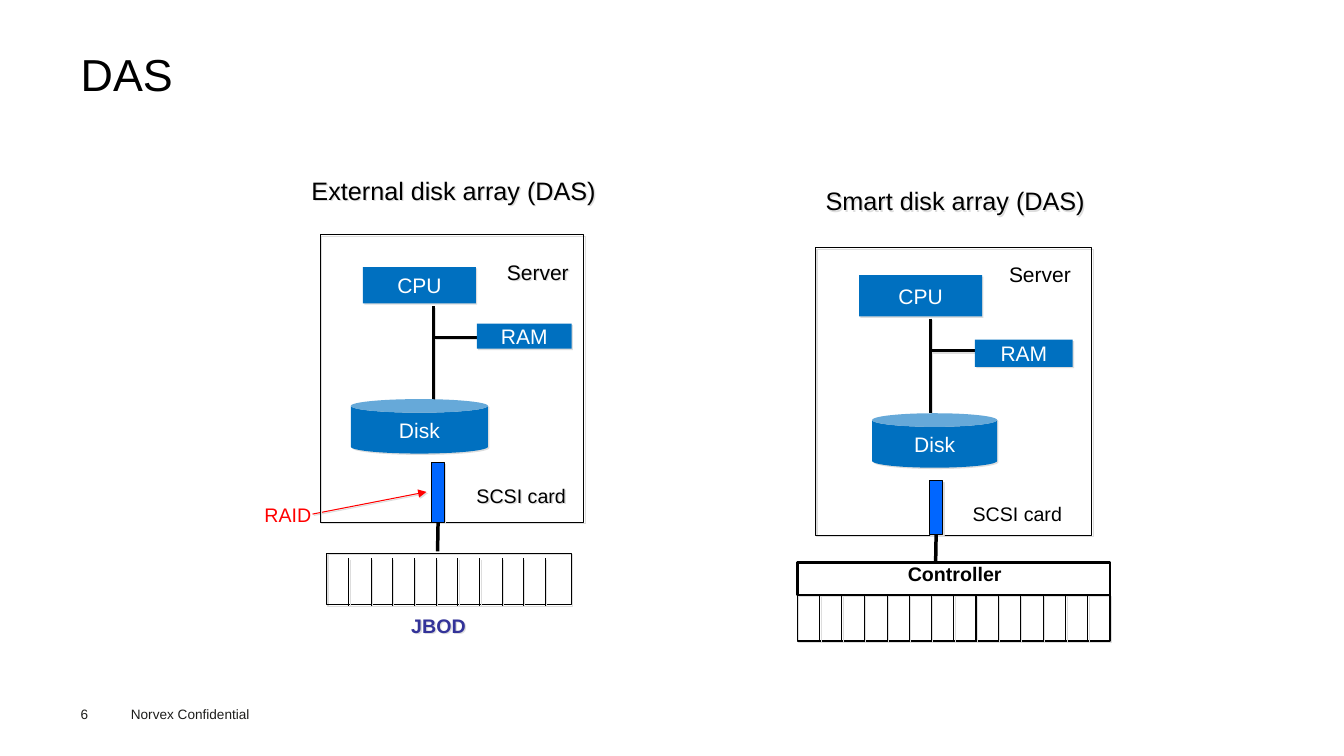
from dataclasses import dataclass

from lxml.etree import SubElement
from pptx import Presentation
from pptx.dml.color import RGBColor
from pptx.enum.shapes import MSO_CONNECTOR as Link, MSO_SHAPE as Preset
from pptx.enum.text import MSO_ANCHOR as Anchor, MSO_AUTO_SIZE as AutoSize, PP_ALIGN as Align
from pptx.oxml.ns import qn
from pptx.util import Emu, Pt

PX = 9144
FONT = "Arial"
COLORS = {
    "ink": "000000", "footer": "1D1D1B", "white": "FFFFFF", "part": "0070C0",
    "card": "0066FF", "raid": "FF0000", "jbod": "333399", "shadow": "DDDDDD",
}

Rect = tuple[int, int, int, int]
Point = tuple[int, int]


@dataclass(frozen=True)
class Block:
    box: Rect
    label: str = ""
    preset: Preset = Preset.RECTANGLE
    fill: str = ""
    line: float = 0
    shadow: bool = True


@dataclass(frozen=True)
class Caption:
    label: str
    box: Rect
    size: float
    color: str = "ink"
    bold: bool = False
    shadow: bool = False
    align: Align = Align.CENTER
    inset: Point = (9, 4)


@dataclass(frozen=True)
class Wire:
    start: Point
    end: Point
    width: float = 2
    color: str = "ink"
    arrow: bool = False
    shadow: bool = True


@dataclass(frozen=True)
class Dividers:
    first: int
    last: int
    count: int
    top: int
    bottom: int


@dataclass(frozen=True)
class DiskArray:
    wires: list[Wire]
    blocks: list[Block]
    card: Block
    cable_bottom: int
    dividers: Dividers
    captions: list[Caption]


EXTERNAL = DiskArray(
    wires=[
        Wire((430, 304), (430, 397)),
        Wire((430, 335), (506, 335)),
        Wire((310, 510), (423, 488), 0.75, "raid", arrow=True),
    ],
    blocks=[
        Block((360, 265, 112, 36), "CPU", fill="part"),
        Block((348, 396, 136, 54), "Disk", Preset.CAN, "part"),
        Block((473, 321, 94, 25), "RAM", fill="part"),
        Block((318, 233, 261, 285), line=0.75),
        Block((324, 549, 243, 51), line=0.75),
    ],
    card=Block((428, 459, 13, 59), fill="card", line=0.75),
    cable_bottom=547,
    dividers=Dividers(346, 541, 10, 554, 601),
    captions=[
        Caption("External disk array (DAS)", (327, 170, 246, 39), 18, shadow=True),
        Caption("Server", (495, 253, 77, 34), 15, shadow=True),
        Caption("SCSI card", (433, 476, 168, 32), 14, shadow=True),
        Caption("RAID", (235, 495, 101, 32), 14, "raid"),
        Caption("JBOD", (403, 605, 64, 32), 14, "jbod", bold=True, shadow=True),
    ],
)

SMART = DiskArray(
    wires=[
        Wire((923, 316), (923, 410)),
        Wire((923, 348), (1001, 348)),
    ],
    blocks=[
        Block((865, 410, 124, 54), "Disk", Preset.CAN, "part"),
        Block((852, 273, 122, 41), "CPU", fill="part"),
        Block((967, 337, 97, 27), "RAM", fill="part"),
        Block((809, 246, 274, 285), line=0.75),
        Block((791, 590, 310, 46), line=0.75),
        Block((791, 558, 310, 32), line=1.5, shadow=False),
    ],
    card=Block((922, 477, 13, 53), fill="card", line=0.75),
    cable_bottom=557,
    dividers=Dividers(813, 1079, 13, 590, 636),
    captions=[
        Caption("Smart disk array (DAS)", (826, 180, 243, 38), 18, shadow=True),
        Caption("Server", (993, 255, 77, 34), 15),
        Caption("SCSI card", (943, 494, 132, 32), 14),
        Caption("Controller", (909, 553, 76, 32), 14, bold=True),
    ],
)

FOOTER = [
    Caption("Norvex Confidential", (120, 695, 160, 27), 9.7, "footer",
            align=Align.LEFT, inset=(10, 5)),
    Caption("6", (80, 700, 55, 16), 9.7, "footer", align=Align.LEFT, inset=(0, 0)),
]


def px(*lengths: int) -> list[Emu]:
    return [Emu(length * PX) for length in lengths]


def rgb(name: str) -> RGBColor:
    return RGBColor.from_string(COLORS[name])


def set_effects(shape, shadow: bool) -> None:
    properties = shape._element.spPr
    effects = properties.find(qn("a:effectLst"))
    if effects is None:
        effects = SubElement(properties, qn("a:effectLst"))
    if shadow:
        outer = SubElement(effects, qn("a:outerShdw"), dist="17780", dir="2700000",
                           algn="ctr", rotWithShape="0")
        SubElement(outer, qn("a:srgbClr"), val=COLORS["shadow"])


def write(frame, label: str, size: float, color: str, bold: bool = False,
          align: Align = Align.CENTER, inset: Point = (9, 4),
          anchor: Anchor = Anchor.TOP) -> None:
    frame.auto_size = AutoSize.NONE
    frame.word_wrap = align == Align.LEFT
    frame.vertical_anchor = anchor
    frame.margin_left, frame.margin_top = px(*inset)
    frame.margin_right, frame.margin_bottom = px(*inset)
    paragraph = frame.paragraphs[0]
    paragraph.alignment = align
    run = paragraph.add_run()
    run.text = label
    run.font.name = FONT
    run.font.size = Pt(size)
    run.font.bold = bold
    run.font.color.rgb = rgb(color)


def draw_block(slide, block: Block):
    shape = slide.shapes.add_shape(block.preset, *px(*block.box))
    shape.shadow.inherit = False
    if block.fill:
        shape.fill.solid()
        shape.fill.fore_color.rgb = rgb(block.fill)
    else:
        shape.fill.background()
    if block.line:
        shape.line.color.rgb = rgb("ink")
        shape.line.width = Pt(block.line)
    else:
        shape.line.fill.background()
    set_effects(shape, block.shadow)
    if block.label:
        write(shape.text_frame, block.label, 15, "white", anchor=Anchor.MIDDLE)
    return shape


def draw_caption(slide, caption: Caption) -> None:
    box = slide.shapes.add_textbox(*px(*caption.box))
    set_effects(box, caption.shadow)
    write(box.text_frame, caption.label, caption.size, caption.color,
          caption.bold, caption.align, caption.inset)


def draw_wire(slide, wire: Wire):
    line = slide.shapes.add_connector(Link.STRAIGHT, *px(*wire.start, *wire.end))
    line.line.color.rgb = rgb(wire.color)
    line.line.width = Pt(wire.width)
    if wire.arrow:
        SubElement(line._element.spPr.find(qn("a:ln")), qn("a:tailEnd"), type="triangle")
    set_effects(line, wire.shadow)
    return line


def draw_array(slide, array: DiskArray) -> None:
    for wire in array.wires:
        draw_wire(slide, wire)
    for block in array.blocks:
        draw_block(slide, block)
    card = draw_block(slide, array.card)
    left, top, width, height = array.card.box
    center = left + width // 2
    cable = draw_wire(slide, Wire((center, top + height), (center, array.cable_bottom),
                                  2.5, shadow=False))
    cable.begin_connect(card, 2)
    slots = array.dividers
    for index in range(slots.count):
        x = round(slots.first + index * (slots.last - slots.first) / (slots.count - 1))
        draw_wire(slide, Wire((x, slots.top), (x, slots.bottom), 0.75))
    for caption in array.captions:
        draw_caption(slide, caption)


def main() -> None:
    deck = Presentation()
    deck.slide_width, deck.slide_height = px(1333, 750)
    slide = deck.slides.add_slide(deck.slide_layouts[5])
    title = slide.shapes.title
    title.left, title.top, title.width, title.height = px(80, 49, 1173, 54)
    write(title.text_frame, "DAS", 32, "ink", align=Align.LEFT, inset=(0, 0),
          anchor=Anchor.MIDDLE)
    title.text_frame.paragraphs[0].line_spacing = 0.9
    for caption in FOOTER:
        draw_caption(slide, caption)
    for array in (EXTERNAL, SMART):
        draw_array(slide, array)
    deck.save("out.pptx")


if __name__ == "__main__":
    main()
